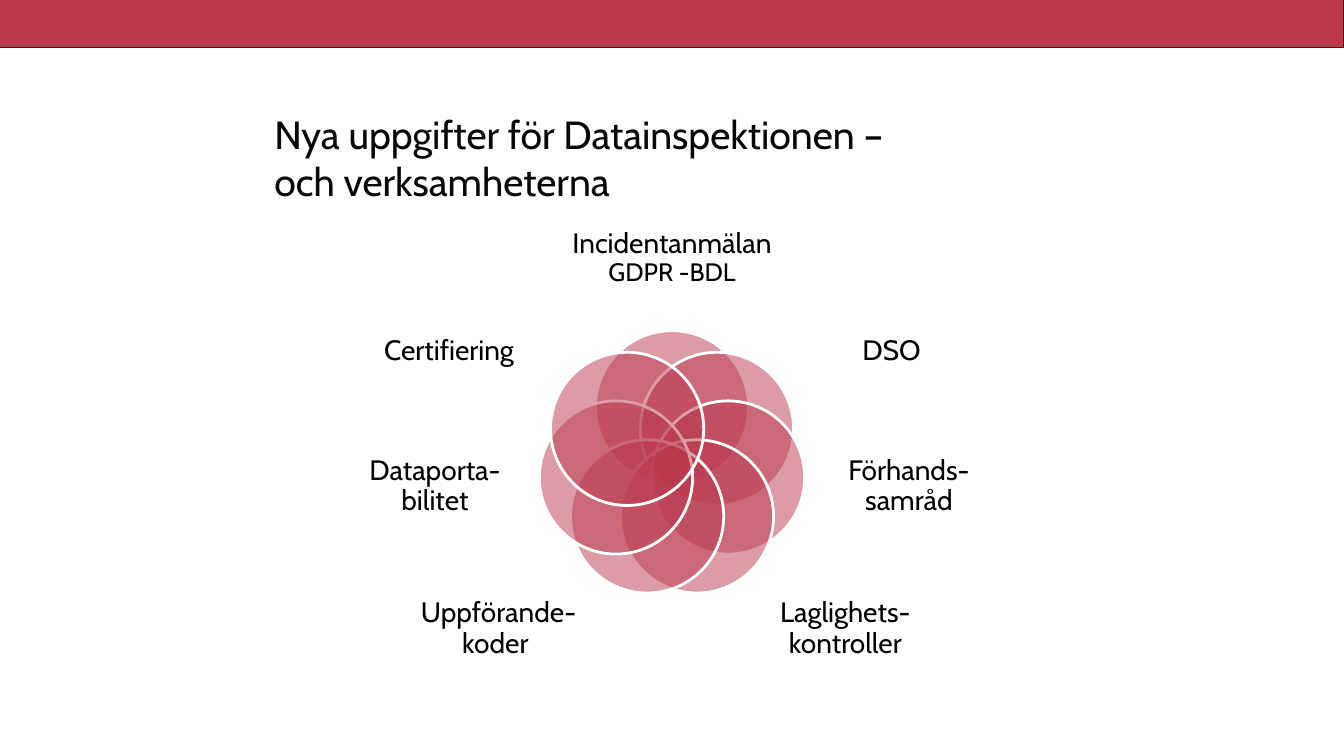
import math

import pptx
import pptx.dml.color
import pptx.enum.shapes
import pptx.enum.text
import pptx.oxml
import pptx.oxml.ns
import pptx.util

Inches, Pt = pptx.util.Inches, pptx.util.Pt
RGBColor = pptx.dml.color.RGBColor
MSO_SHAPE = pptx.enum.shapes.MSO_SHAPE
PP_ALIGN = pptx.enum.text.PP_ALIGN
MSO_ANCHOR = pptx.enum.text.MSO_ANCHOR

TITLE = "Nya uppgifter för Datainspektionen – \voch verksamheterna"
TOP, UPPER, MIDDLE, LOWER = "top", "upper", "middle", "lower"
LABELS = [
    ([("Incidentanmälan ", 20), ("GDPR -BDL", 18)], TOP, 0),
    ([("DSO ", 20)], UPPER, 1),
    ([("Förhands-samråd", 20)], MIDDLE, 1),
    ([("Laglighets-kontroller", 20)], LOWER, 1),
    ([("Uppförande-koder ", 20)], LOWER, -1),
    ([("Dataporta-bilitet", 20)], MIDDLE, -1),
    ([("Certifiering", 20)], UPPER, -1),
]
# reach, top, width, height
ROWS = {
    TOP: (0, 2.10, 2.05, 0.93),
    UPPER: (2.21, 2.98, 1.64, 1.02),
    MIDDLE: (2.35, 4.28, 1.61, 1.09),
    LOWER: (1.72, 5.74, 1.74, 1.00),
}

RED = RGBColor(0xBA, 0x39, 0x4E)
DARK_GREEN = RGBColor(0x00, 0x33, 0x00)
INK = RGBColor(0x08, 0x08, 0x08)
BLACK = RGBColor(0, 0, 0)
WHITE = RGBColor(0xFF, 0xFF, 0xFF)
FONT = "Cabin"

WIDTH, HEIGHT = 13.33, 7.5
CENTER_X, CENTER_Y = WIDTH / 2, 4.61
RING, DIAMETER = 0.57, 1.52


def add_shape(s, kind, box, line_color, line_width):
    sp = s.shapes.add_shape(kind, *map(Inches, box))
    sp.shadow.inherit = False
    sp.fill.solid()
    sp.fill.fore_color.rgb = RED
    sp.line.color.rgb = line_color
    sp.line.width = Pt(line_width)
    return sp


def clear_margins(tf):
    tf.margin_left = tf.margin_right = tf.margin_top = tf.margin_bottom = 0
    tf.word_wrap = True


def add_petal(s, angle):
    left = CENTER_X + RING * math.sin(angle) - DIAMETER / 2
    top = CENTER_Y - RING * math.cos(angle) - DIAMETER / 2
    sp = add_shape(s, MSO_SHAPE.OVAL, (left, top, DIAMETER, DIAMETER), WHITE, 2)
    color = sp.fill._xPr.find(".//" + pptx.oxml.ns.qn("a:srgbClr"))
    color.append(pptx.oxml.parse_xml(
        f'<a:alpha {pptx.oxml.ns.nsdecls("a")} val="50000"/>'))


def add_label(s, runs, row, side):
    reach, top, width, height = ROWS[row]
    left = CENTER_X + side * reach - width / 2
    tf = s.shapes.add_textbox(*map(Inches, (left, top, width, height))).text_frame
    clear_margins(tf)
    tf.vertical_anchor = MSO_ANCHOR.MIDDLE
    p = tf.paragraphs[0]
    p.alignment = PP_ALIGN.CENTER
    p.line_spacing = 0.9
    for text, size in runs:
        r = p.add_run()
        r.text = text
        r.font.name = FONT
        r.font.size = Pt(size)
        r.font.color.rgb = BLACK


def main():
    prs = pptx.Presentation()
    prs.slide_width, prs.slide_height = Inches(WIDTH), Inches(HEIGHT)
    s = prs.slides.add_slide(prs.slide_layouts[5])

    add_shape(s, MSO_SHAPE.RECTANGLE, (0, 0, WIDTH, 0.47), DARK_GREEN, 0.75)

    title = s.shapes.title
    title.left, title.top, title.width, title.height = map(
        Inches, (2.72, 1.09, 7.85, 1.55))
    tf = title.text_frame
    tf.text = TITLE
    clear_margins(tf)
    tf.auto_size = pptx.enum.text.MSO_AUTO_SIZE.NONE
    tf.vertical_anchor = MSO_ANCHOR.TOP
    p = tf.paragraphs[0]
    p.alignment = PP_ALIGN.LEFT
    p.font.name = FONT
    p.font.size = Pt(28)
    p.font.color.rgb = INK

    for i, (runs, row, side) in enumerate(LABELS):
        add_petal(s, math.tau * i / len(LABELS))
        add_label(s, runs, row, side)

    prs.save("out.pptx")


if __name__ == "__main__":
    main()
